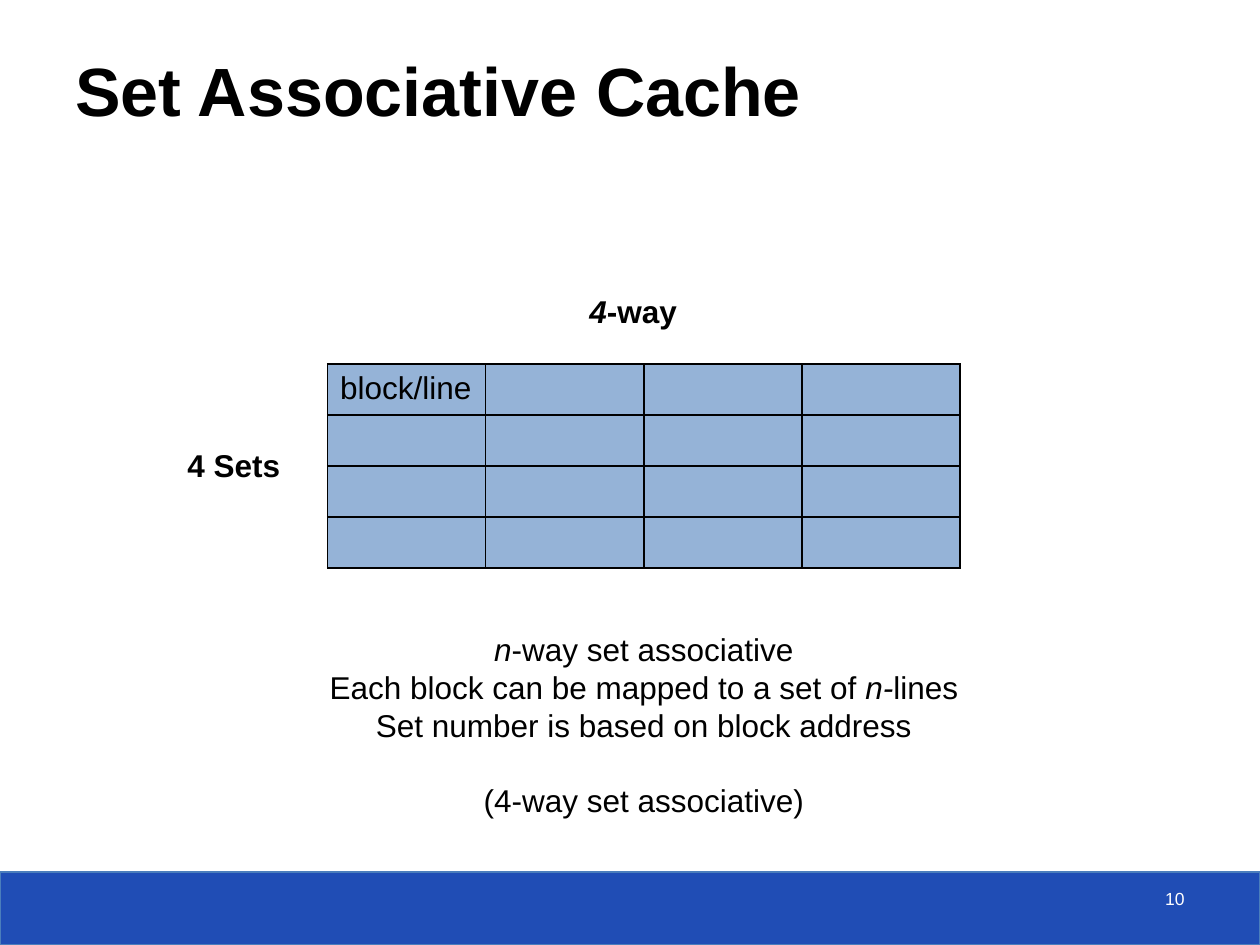
from lxml import etree
from pptx import Presentation
from pptx.dml.color import RGBColor
from pptx.enum.shapes import MSO_SHAPE
from pptx.enum.text import MSO_ANCHOR, PP_ALIGN
from pptx.oxml.ns import qn
from pptx.util import Inches, Pt

LEFT, CENTER, RIGHT = PP_ALIGN.LEFT, PP_ALIGN.CENTER, PP_ALIGN.RIGHT
TOP, BOTTOM = MSO_ANCHOR.TOP, MSO_ANCHOR.BOTTOM
RECTANGLE = MSO_SHAPE.RECTANGLE

SLIDE_W, SLIDE_H = 10, 7.5
FONT, BODY_SIZE = "Arial", 18
BLACK, WHITE, FOOTER_BLUE, FOOTER_EDGE, BLOCK_BLUE = (
    "000000", "FFFFFF", "204DB5", "4B7EBC", "95B3D7")

# Each paragraph is a list of (text, italic) runs.
TITLE = [[("Set Associative Cache", False)]]
PAGE_NUMBER = [[("10", False)]]
SETS_LABEL = [[("4 Sets", False)]]
WAYS_LABEL = [[("4", True), ("-way", False)]]
EXPLANATION = [
    [("n", True), ("-way set associative", False)],
    [("Each block can be mapped to a set of ", False), ("n-", True), ("lines", False)],
    [("Set number is based on block address", False)],
    [("(4-way set associative)", False)],
]
SETS, WAYS = 4, 4
FIRST_BLOCK = "block/line"
CACHE_LEFT, CACHE_TOP, BLOCK_W, BLOCK_H = 2.6, 2.89, 1.255, 0.405
FOOTER_H = 0.58


def color(hex_string):
    return RGBColor.from_string(hex_string)


def fill_solid(target, hex_string):
    target.fill.solid()
    target.fill.fore_color.rgb = color(hex_string)


def style(font, size=BODY_SIZE, hex_string=BLACK, bold=False, italic=False):
    font.name, font.size, font.bold, font.italic = FONT, Pt(size), bold, italic
    font.color.rgb = color(hex_string)


def add_text(slide, box, paragraphs, align=LEFT, anchor=TOP, wrap=False,
             size=BODY_SIZE, hex_string=BLACK, bold=False):
    text_box = slide.shapes.add_textbox(*map(Inches, box))
    frame = text_box.text_frame
    frame.word_wrap, frame.vertical_anchor = wrap, anchor
    for index, runs in enumerate(paragraphs):
        paragraph = frame.add_paragraph() if index else frame.paragraphs[0]
        paragraph.alignment = align
        for text, italic in runs:
            run = paragraph.add_run()
            run.text = text
            style(run.font, size, hex_string, bold, italic)
    return text_box


def add_borders(cell, hex_string, width):
    properties = cell._tc.get_or_add_tcPr()
    for position, side in enumerate(("a:lnL", "a:lnR", "a:lnT", "a:lnB")):
        line = etree.Element(qn(side), w=str(Pt(width)))
        solid = etree.SubElement(line, qn("a:solidFill"))
        etree.SubElement(solid, qn("a:srgbClr"), val=hex_string)
        properties.insert(position, line)


def add_footer(slide):
    bar = slide.shapes.add_shape(RECTANGLE, 0, Inches(SLIDE_H - FOOTER_H),
                                 Inches(SLIDE_W), Inches(FOOTER_H))
    bar.shadow.inherit = False
    fill_solid(bar, FOOTER_BLUE)
    bar.line.color.rgb = color(FOOTER_EDGE)
    bar.line.width = Pt(0.75)


def add_title(slide):
    title = add_text(slide, (0.5, 0.25, 9.22, 0.83), TITLE, anchor=BOTTOM,
                     wrap=True, size=39, bold=True)
    fill_solid(title, WHITE)
    tint = title._element.spPr.find(".//" + qn("a:srgbClr"))
    etree.SubElement(tint, qn("a:alpha"), val="75000")


def add_cache(slide):
    cache = slide.shapes.add_table(
        SETS, WAYS, Inches(CACHE_LEFT), Inches(CACHE_TOP),
        Inches(WAYS * BLOCK_W), Inches(SETS * BLOCK_H)).table
    cache.first_row = cache.horz_banding = False
    cache.cell(0, 0).text = FIRST_BLOCK
    for block in cache.iter_cells():
        fill_solid(block, BLOCK_BLUE)
        add_borders(block, BLACK, 1)
        style(block.text_frame.paragraphs[0].font)
    style(cache.cell(0, 0).text_frame.paragraphs[0].runs[0].font)


def main():
    presentation = Presentation()
    presentation.slide_width = Inches(SLIDE_W)
    presentation.slide_height = Inches(SLIDE_H)
    slide = presentation.slides.add_slide(presentation.slide_layouts[6])

    add_footer(slide)
    add_title(slide)
    add_text(slide, (7.17, 7, 2.33, 0.33), PAGE_NUMBER, RIGHT, wrap=True,
             size=10, hex_string=WHITE)
    add_cache(slide)
    add_text(slide, (1.38, 3.49, 0.95, 0.4), SETS_LABEL, CENTER, bold=True)
    add_text(slide, (4.58, 2.27, 0.9, 0.4), WAYS_LABEL, bold=True)
    explanation = add_text(slide, (2.49, 4.95, 5.24, 1.62), EXPLANATION, CENTER)
    explanation.text_frame.paragraphs[-1].space_before = Pt(21.7)

    presentation.save("out.pptx")


if __name__ == "__main__":
    main()
